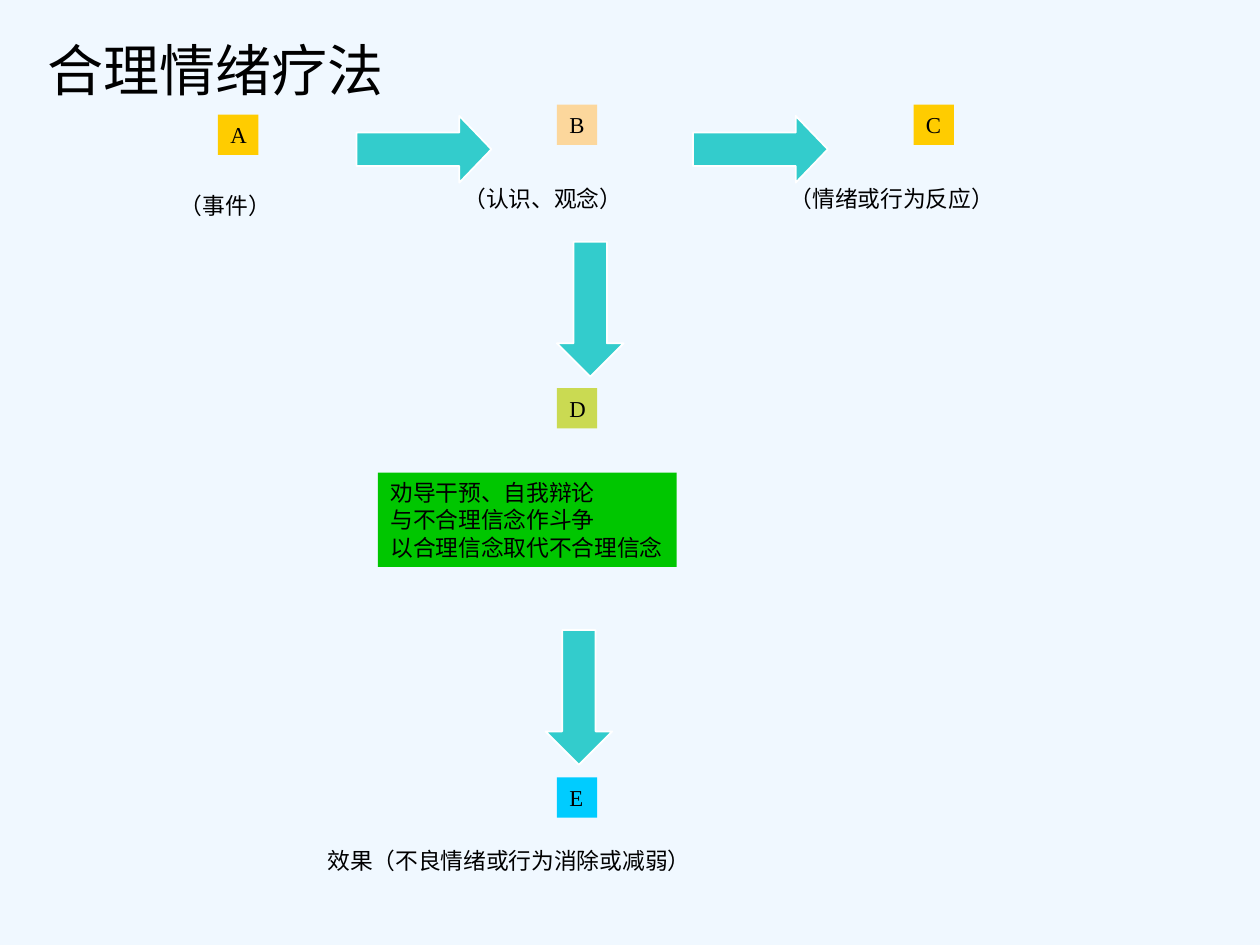
from pptx import Presentation
from pptx.dml.color import RGBColor
from pptx.enum import shapes, text
from pptx.util import Inches, Pt

FONT = "Times New Roman"
INK = "000000"
TEAL = "33CCCC"
GOLD = "FFCC00"
SIDE = 0.32
LONG, THICK = 1.07, 0.53
KIND = shapes.MSO_SHAPE


def paint(color, value):
    color.rgb = RGBColor.from_string(value)


def write(shape, words, size=13):
    frame = shape.text_frame
    frame.text = words
    frame.word_wrap = False
    frame.vertical_anchor = text.MSO_ANCHOR.TOP
    frame.auto_size = text.MSO_AUTO_SIZE.SHAPE_TO_FIT_TEXT
    for para in frame.paragraphs:
        para.alignment = text.PP_ALIGN.LEFT
        for run in para.runs:
            run.font.name = FONT
            run.font.size = Pt(size)
            paint(run.font.color, INK)


def form(slide, kind, box, fill):
    shape = slide.shapes.add_shape(kind, *map(Inches, box))
    shape.shadow.inherit = False
    shape.fill.solid()
    paint(shape.fill.fore_color, fill)
    return shape


def block(slide, box, words, fill):
    shape = form(slide, KIND.RECTANGLE, box, fill)
    shape.line.fill.background()
    write(shape, words)


def label(slide, box, words):
    write(slide.shapes.add_textbox(*map(Inches, box)), words)


def arrow(slide, left, top, down=False):
    kind = KIND.DOWN_ARROW if down else KIND.RIGHT_ARROW
    size = (THICK, LONG) if down else (LONG, THICK)
    shape = form(slide, kind, (left, top, *size), TEAL)
    shape.adjustments[1] = 0.5 if down else 0.48
    paint(shape.line.color, "FFFFFF")
    shape.line.width = Pt(1)


def title(slide, box, words):
    shape = slide.shapes.add_textbox(*map(Inches, box))
    write(shape, words, 32)
    frame = shape.text_frame
    frame.auto_size = text.MSO_AUTO_SIZE.NONE
    frame.word_wrap = True
    frame.vertical_anchor = text.MSO_ANCHOR.MIDDLE


def step(slide, left, top, letter, fill, note=None):
    block(slide, (left, top, SIDE, SIDE), letter, fill)
    if note:
        words, shift, drop, width = note
        label(slide, (left + shift, top + drop, width, SIDE), words)


def chain(slide, left, top):
    step(slide, left, top + 0.08, "A", GOLD, ("（事件）", -0.4, 0.56, 0.92))
    step(slide, left + 2.69, top, "B", "FCD79C",
         ("（认识、观念）", -0.84, 0.59, 1.47))
    step(slide, left + 5.52, top, "C", GOLD,
         ("（情绪或行为反应）", -1.08, 0.59, 1.83))
    for shift in (1.1, 3.77):
        arrow(slide, left + shift, top + 0.09)


def descent(slide, left, top):
    arrow(slide, left, top, True)
    step(slide, left, top + 1.16, "D", "CADA52")
    block(slide, (left - 1.42, top + 1.83, 2.37, 0.75),
          "劝导干预、自我辩论\n与不合理信念作斗争\n以合理信念取代不合理信念", "00C600")
    arrow(slide, left - 0.09, top + 3.08, True)
    step(slide, left, top + 4.25, "E", "00CCFF",
         ("效果（不良情绪或行为消除或减弱）", -1.92, 0.5, 3.09))


def main():
    deck = Presentation()
    deck.slide_width, deck.slide_height = Inches(10), Inches(7.5)
    slide = deck.slides.add_slide(deck.slide_layouts[6])
    slide.background.fill.solid()
    paint(slide.background.fill.fore_color, "F0F8FF")
    title(slide, (0.28, 0.05, 3.13, 1), "合理情绪疗法")
    chain(slide, 1.73, 0.83)
    descent(slide, 4.42, 1.92)
    deck.save("out.pptx")


if __name__ == "__main__":
    main()
